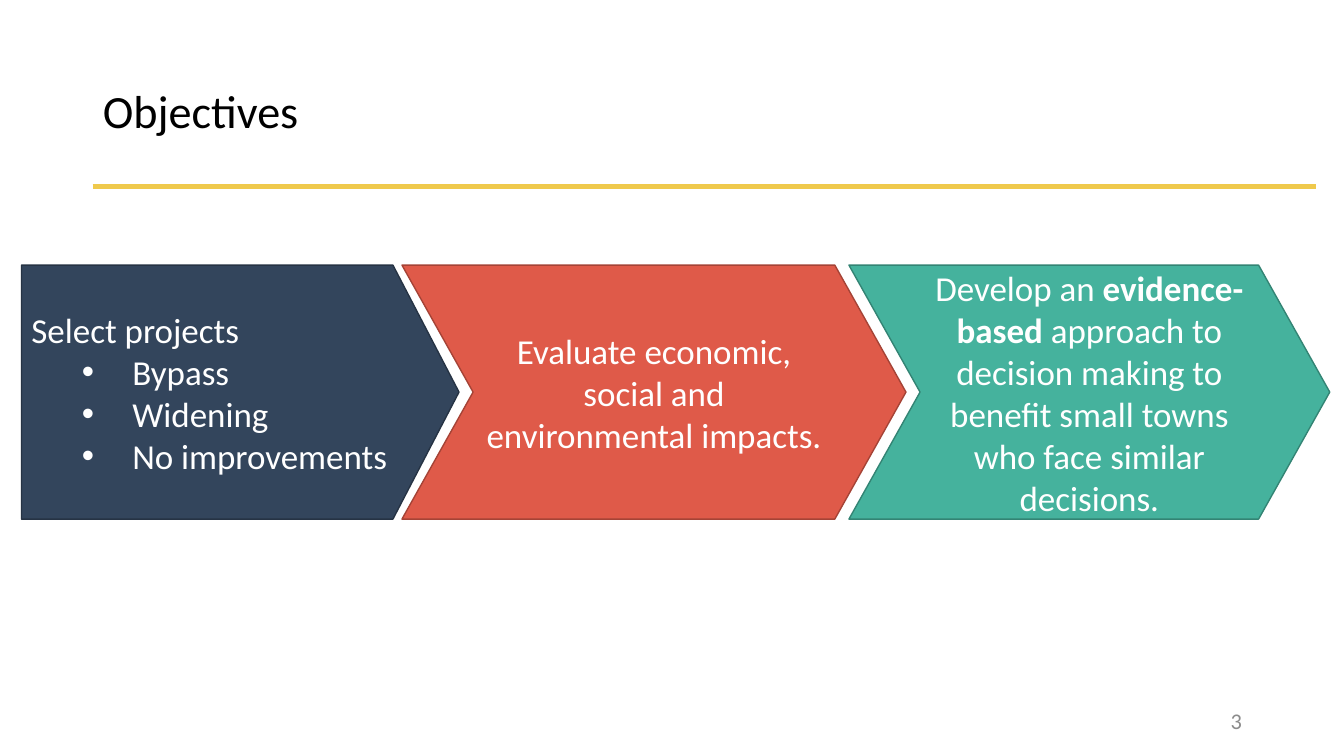
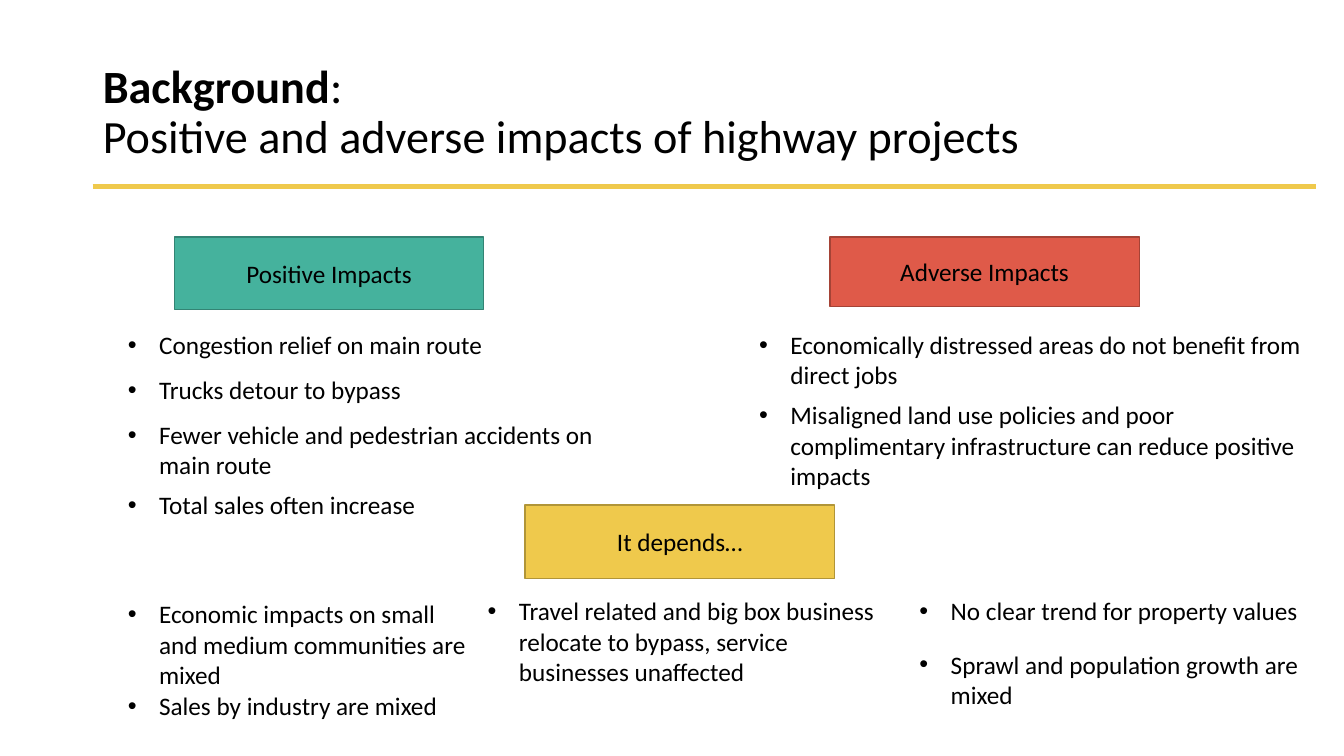
from dataclasses import dataclass

from lxml import etree
from pptx import Presentation
from pptx import util as u
from pptx.dml.color import RGBColor
from pptx.enum import shapes, text
from pptx.oxml import ns

COLORS = {
    "black": "000000", "white": "FFFFFF", "gray": "8C8C8C",
    "navy": "33455C", "navy_edge": "263344",
    "red": "DF5A49", "red_edge": "A54336",
    "teal": "45B29D", "teal_edge": "338474",
    "gold": "EFC94C", "gold_edge": "B19538",
}
FONT = "Calibri"
WIDTH, HEIGHT = u.Inches(13.33), u.Inches(7.5)
COLUMN, ROW = WIDTH / 40, HEIGHT / 30
SHAPE = shapes.MSO_SHAPE
LEFT, CENTER, RIGHT = text.PP_ALIGN.LEFT, text.PP_ALIGN.CENTER, text.PP_ALIGN.RIGHT
MIDDLE, TOP = text.MSO_ANCHOR.MIDDLE, text.MSO_ANCHOR.TOP


@dataclass
class Box:
    """An area in grid columns and rows."""
    left: float
    top: float
    width: float
    height: float

    def inner(self, left, top, width, height):
        return Box(self.left + left, self.top + top, width, height)

    def lengths(self):
        return (u.Emu(round(self.left * COLUMN)), u.Emu(round(self.top * ROW)),
                u.Emu(round(self.width * COLUMN)), u.Emu(round(self.height * ROW)))


TITLE_BOX = Box(2.76, 1.6, 34.5, 5.8)
RULE_END = 39.18
NUMBER_BOX = Box(28.26, 27.8, 9, 1.6)


def color(name):
    return RGBColor.from_string(COLORS[name])


def add_bullet(para, margin, hanging):
    properties = para._p.get_or_add_pPr()
    properties.set("marL", str(u.Inches(margin)))
    properties.set("indent", str(-u.Inches(hanging)))
    font = etree.SubElement(properties, ns.qn("a:buFont"))
    font.set("typeface", "Arial")
    etree.SubElement(properties, ns.qn("a:buChar")).set("char", "•")


def write_para(para, content, size=18, ink="black", align=LEFT, before=0,
               bullet=None, spacing=None):
    """Write a string or a list of (text, bold) spans as one paragraph."""
    if bullet:
        add_bullet(para, *bullet)
    para.alignment = align
    para.space_before = u.Pt(before)
    if spacing:
        para.line_spacing = spacing
    spans = [(content, False)] if isinstance(content, str) else content
    for words, bold in spans:
        if words == "\n":
            para.add_line_break()
            continue
        span = para.add_run()
        span.text = words
        span.font.name = FONT
        span.font.size = u.Pt(size)
        span.font.bold = bold
        span.font.color.rgb = color(ink)


def fill_frame(frame, contents, anchor=MIDDLE, **form):
    """Write paragraphs, each given as (content, own format)."""
    frame.word_wrap = True
    frame.auto_size = text.MSO_AUTO_SIZE.NONE
    frame.vertical_anchor = anchor
    for index, (content, own) in enumerate(contents):
        para = frame.add_paragraph() if index else frame.paragraphs[0]
        write_para(para, content, **{**form, **own})


def add_panel(page, box, kind, fill, contents, **form):
    panel = page.shapes.add_shape(kind, *box.lengths())
    panel.shadow.inherit = False
    panel.fill.solid()
    panel.fill.fore_color.rgb = color(fill)
    panel.line.color.rgb = color(fill + "_edge")
    panel.line.width = u.Pt(1)
    fill_frame(panel.text_frame, contents, **form)
    return panel


def add_text(page, box, contents, **form):
    area = page.shapes.add_textbox(*box.lengths())
    fill_frame(area.text_frame, contents, **form)


# Title and gold rule shared by all slides
def start_page(deck, title):
    page = deck.slides.add_slide(deck.slide_layouts[5])
    holder = page.shapes.title
    holder.left, holder.top, holder.width, holder.height = TITLE_BOX.lengths()
    fill_frame(holder.text_frame, [(title, {})], size=33, spacing=0.9)
    left, top, _, height = TITLE_BOX.lengths()
    rule = page.shapes.add_connector(shapes.MSO_CONNECTOR.STRAIGHT, left, top + height,
                                     u.Emu(round(RULE_END * COLUMN)), top + height)
    rule.line.color.rgb = color("gold")
    rule.line.width = u.Pt(3)
    etree.SubElement(rule._element.spPr, ns.qn("a:effectLst"))
    return page


# Row of interlocking arrows
def arrow_row(page, box, steps, gap=0.42, notch=0.28):
    left = 0
    for kind, width, point, fill, contents, align in steps:
        arrow = add_panel(page, box.inner(left, 0, width, box.height), kind, fill,
                          contents, size=25, ink="white", align=align)
        arrow.adjustments[0] = point
        left += width - notch * box.height * ROW / COLUMN + gap


# Coloured heading with bullet lists below it
def impact_group(page, box, heading, fill, offset, height, lists):
    add_panel(page, box.inner(offset, 0, 9.21, height), SHAPE.RECTANGLE, fill,
              [(heading, {})], align=CENTER)
    for left, top, width, items in lists:
        contents = [(item, {"before": before}) for item, before in items]
        add_text(page, box.inner(left, top, width, box.height - top), contents,
                 anchor=TOP, bullet=(0.31, 0.31))


def objectives_page(deck):
    page = start_page(deck, "Objectives")
    nested = {"bullet": (1, 0.5)}
    projects = [("Select projects", {}), ("Bypass", nested), ("Widening", nested),
                ("No improvements", nested)]
    evaluation = [("Evaluate economic, social and environmental impacts.", {})]
    approach = [([("Develop an ", False), ("evidence-based", True),
                  (" approach to decision making to benefit small towns "
                   "who face similar decisions.", False)], {})]
    arrow_row(page, Box(0.64, 10.52, 38.95, 10.08), [
        (SHAPE.PENTAGON, 13.02, 0.26, "navy", projects, LEFT),
        (SHAPE.CHEVRON, 15, 0.28, "red", evaluation, CENTER),
        (SHAPE.CHEVRON, 14.31, 0.28, "teal", approach, CENTER),
    ])
    add_text(page, NUMBER_BOX, [("3", {})], size=16, ink="gray", align=RIGHT)


def background_page(deck):
    page = start_page(deck, [
        ("Background", True), (": ", False), ("\n", False),
        ("Positive and adverse impacts of highway projects", False)])
    impact_group(page, Box(3.51, 9.4, 14.67, 11.5), "Positive Impacts", "teal", 1.68, 2.88, [
        (0, 3.48, 14.67, [
            ("Congestion relief on main route", 0),
            ("Trucks detour to bypass", 10.5),
            ("Fewer vehicle and pedestrian accidents on main route", 10.5),
            ("Total sales often increase", 7)])])
    impact_group(page, Box(22.3, 9.4, 17.31, 10.4), "Adverse Impacts", "red", 2.4, 2.76, [
        (0, 3.48, 17.31, [
            ("Economically distressed areas do not benefit from direct jobs", 0),
            ("Misaligned land use policies and poor complimentary "
             "infrastructure can reduce positive impacts", 7)])])
    impact_group(page, Box(3.51, 20.04, 36.1, 8.9), "It depends…", "gold", 12.12, 2.92, [
        (0, 3.52, 10.71, [
            ("Economic impacts on small and medium communities are mixed", 0),
            ("Sales by industry are mixed", 1)]),
        (10.71, 3.4, 12.54, [
            ("Travel related and big box business relocate to bypass, "
             "service businesses unaffected", 0)]),
        (23.56, 3.4, 12.54, [
            ("No clear trend for property values", 0),
            ("Sprawl and population growth are mixed", 16.5)])])


def main():
    deck = Presentation()
    deck.slide_width, deck.slide_height = WIDTH, HEIGHT
    objectives_page(deck)
    background_page(deck)
    deck.save("out.pptx")


if __name__ == "__main__":
    main()
